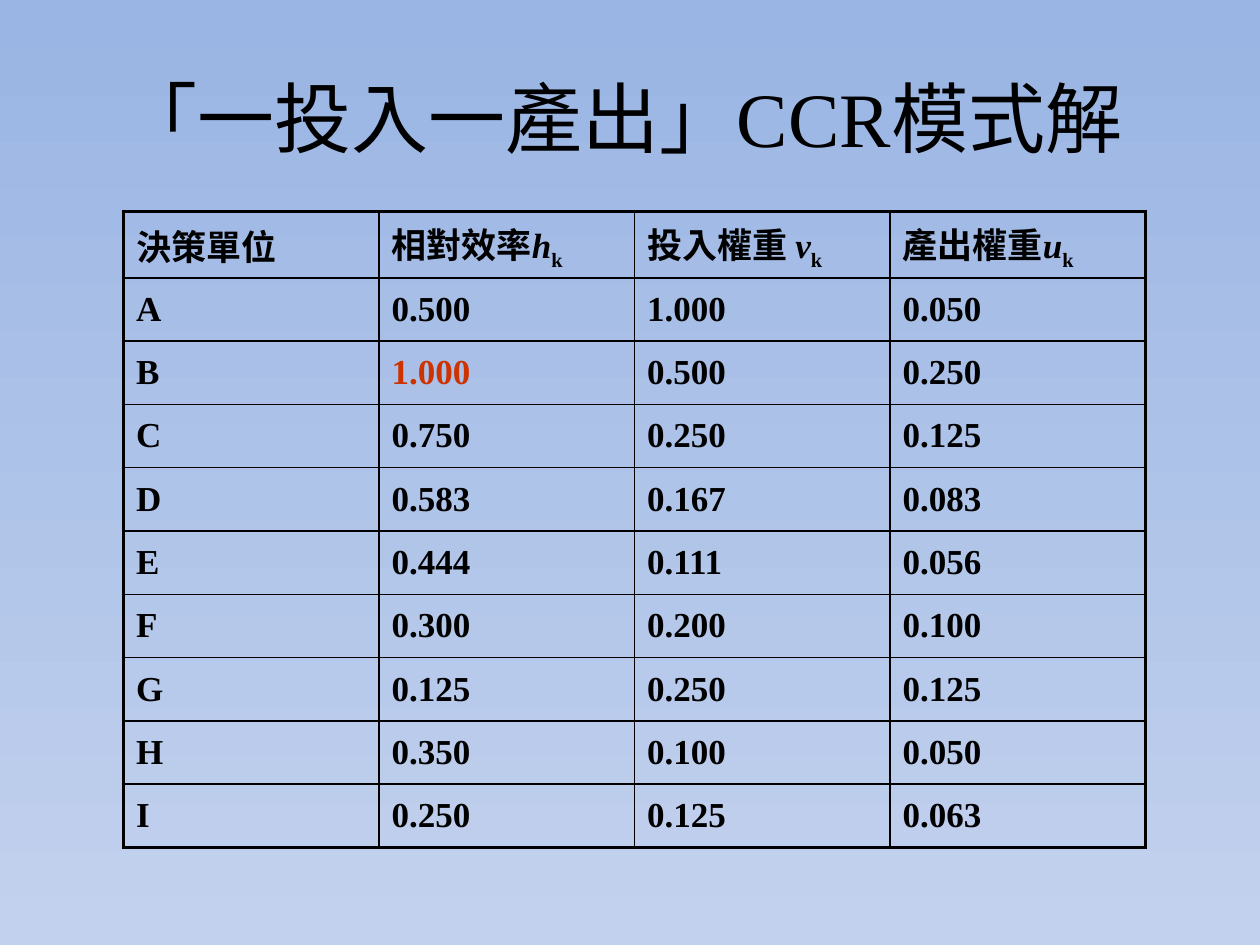
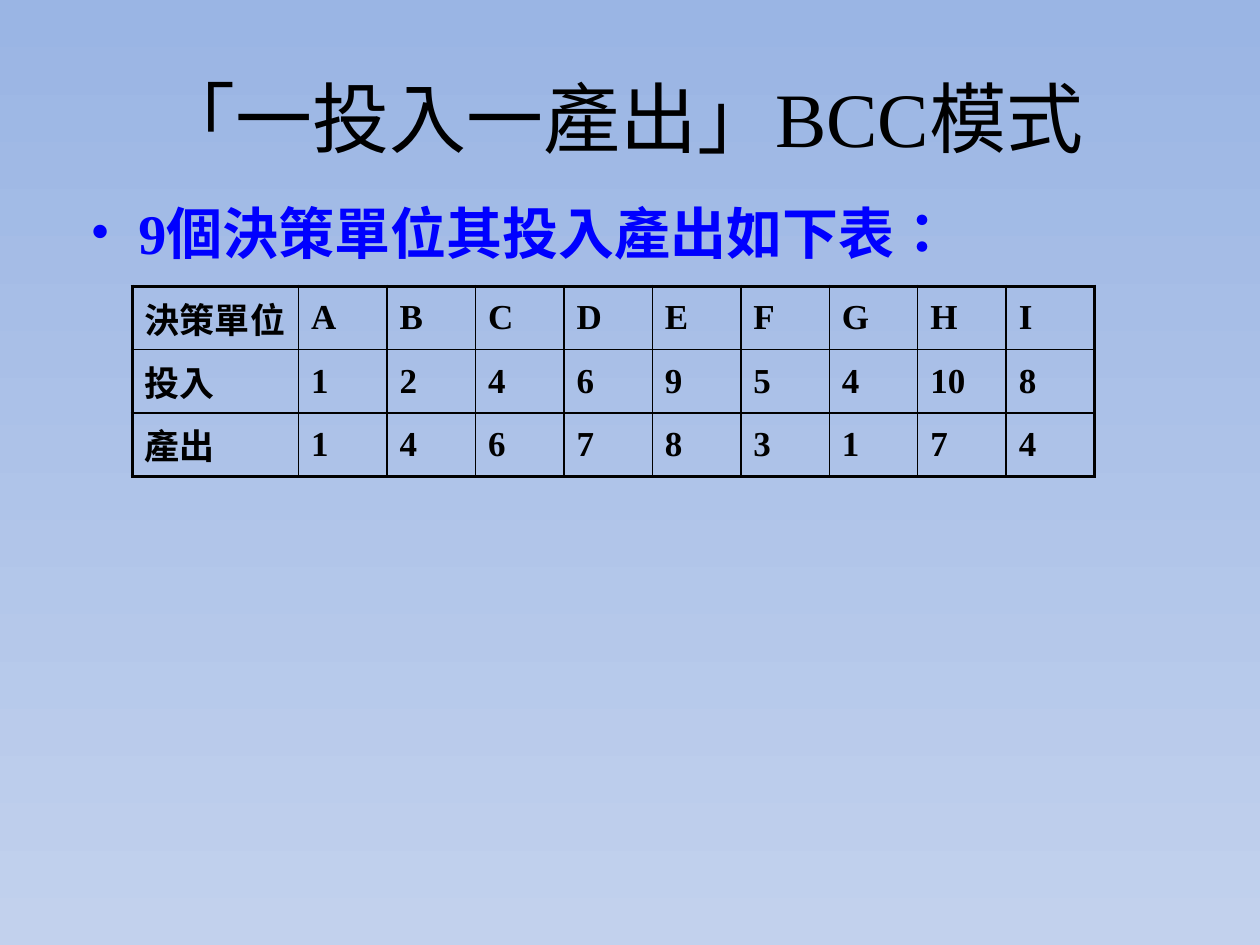
"""Build two slides on the one-input one-output CCR and BCC models."""
from lxml import etree
from pptx import Presentation
from pptx.dml.color import RGBColor
from pptx.enum.text import MSO_ANCHOR, PP_ALIGN
from pptx.oxml.ns import qn
from pptx.util import Inches, Pt

MIDDLE, CENTER = MSO_ANCHOR.MIDDLE, PP_ALIGN.CENTER
FONT = "Times New Roman"
BLACK, BLUE, RED = "000000", "0000FF", "CC3300"
SKY_TOP, SKY_BOTTOM = "9AB5E4", "C2D1ED"
THIN, THICK = Pt(1), Pt(2.25)
W, H = Inches(10), Inches(7.5)
ROW_SHARE = 0.067


def paint(color_format, hex_color):
    color_format.rgb = RGBColor.from_string(hex_color)


def write(p, text, size=20, color=BLACK, bold=True, italic=False, baseline=0):
    r = p.add_run()
    r.text = text
    r.font.name, r.font.size = FONT, Pt(size)
    r.font.bold, r.font.italic = bold, italic
    paint(r.font.color, color)
    rPr = r._r.get_or_add_rPr()
    rPr.set("lang", "zh-TW")
    if baseline:
        rPr.set("baseline", str(baseline * 1000))


prs = Presentation()
prs.slide_width, prs.slide_height = W, H
fill = prs.slide_master.background.fill
fill.gradient()
fill.gradient_angle = 270
for stop, position, hex_color in zip(fill.gradient_stops, (0, 1), (SKY_TOP, SKY_BOTTOM)):
    stop.position = position
    paint(stop.color, hex_color)

units = "ABCDEFGHI"
efficiency = "0.500 1.000 0.750 0.583 0.444 0.300 0.125 0.350 0.250".split()
input_weight = "1.000 0.500 0.250 0.167 0.111 0.200 0.250 0.100 0.125".split()
output_weight = "0.050 0.250 0.125 0.083 0.056 0.100 0.125 0.050 0.063".split()
ccr_rows = [("決策單位", "相對效率|h|k", "投入權重 |v|k", "產出權重|u|k"),
            *zip(units, efficiency, input_weight, output_weight)]
bcc_rows = [("決策單位", *units),
            ("投入", *"1 2 4 6 9 5 4 10 8".split()),
            ("產出", *"1 4 6 7 8 3 1 7 4".split())]
pages = [
    ("「一投入一產出」CCR模式解 ", "", ccr_rows, (0.098, 0.224), [0.2028] * 4, 0.07),
    ("「一投入一產出」BCC模式 ", "9個決策單位其投入產出如下表：", bcc_rows,
     (0.105, 0.303), [0.132] + [0.0702] * 9, ROW_SHARE),
]
run_styles = ({}, {"italic": True}, {"baseline": -25})

for title, lead, rows, (left, top), col_shares, header_share in pages:
    s = prs.slides.add_slide(prs.slide_layouts[6])
    tf = s.shapes.add_textbox(int(W * 0.05), int(H * 0.04), int(W * 0.9), int(H / 6)).text_frame
    tf.word_wrap, tf.vertical_anchor = True, MIDDLE
    p = tf.paragraphs[0]
    p.alignment = CENTER
    write(p, title, size=44, bold=False)

    if lead:
        tf = s.shapes.add_textbox(int(W * 0.062), int(H * 0.203), int(W * 0.9), int(H * 0.075)).text_frame
        tf.word_wrap = True
        p = tf.paragraphs[0]
        pPr = p._p.get_or_add_pPr()
        pPr.set("marL", str(Inches(0.38)))
        pPr.set("indent", str(-Inches(0.38)))
        etree.SubElement(pPr, qn("a:buFont")).set("typeface", FONT)
        etree.SubElement(pPr, qn("a:buChar")).set("char", "•")
        write(p, lead, size=32, color=BLUE)

    last_row, last_col = len(rows) - 1, len(col_shares) - 1
    row_shares = [header_share] + [ROW_SHARE] * last_row
    table = s.shapes.add_table(len(rows), len(col_shares), int(W * left), int(H * top),
                               int(W * sum(col_shares)), int(H * sum(row_shares))).table
    table.first_row = table.horz_banding = False
    for column, share in zip(table.columns, col_shares):
        column.width = int(W * share)
    for i, row in enumerate(rows):
        table.rows[i].height = int(H * row_shares[i])
        for j, text in enumerate(row):
            cell = table.cell(i, j)
            cell.vertical_anchor = MIDDLE
            cell.fill.background()
            efficient = rows is ccr_rows and j == 1 and text == "1.000"
            for part, style in zip(text.split("|"), run_styles):
                write(cell.text_frame.paragraphs[0], part, color=RED if efficient else BLACK, **style)
            outer = {"L": j == 0, "R": j == last_col, "T": i == 0, "B": i == last_row}
            for n, (side, is_outer) in enumerate(outer.items()):
                ln = etree.Element(qn("a:ln" + side), w=str(THICK if is_outer else THIN))
                solid = etree.SubElement(ln, qn("a:solidFill"))
                etree.SubElement(solid, qn("a:srgbClr")).set("val", BLACK)
                cell._tc.get_or_add_tcPr().insert(n, ln)

prs.save("out.pptx")
